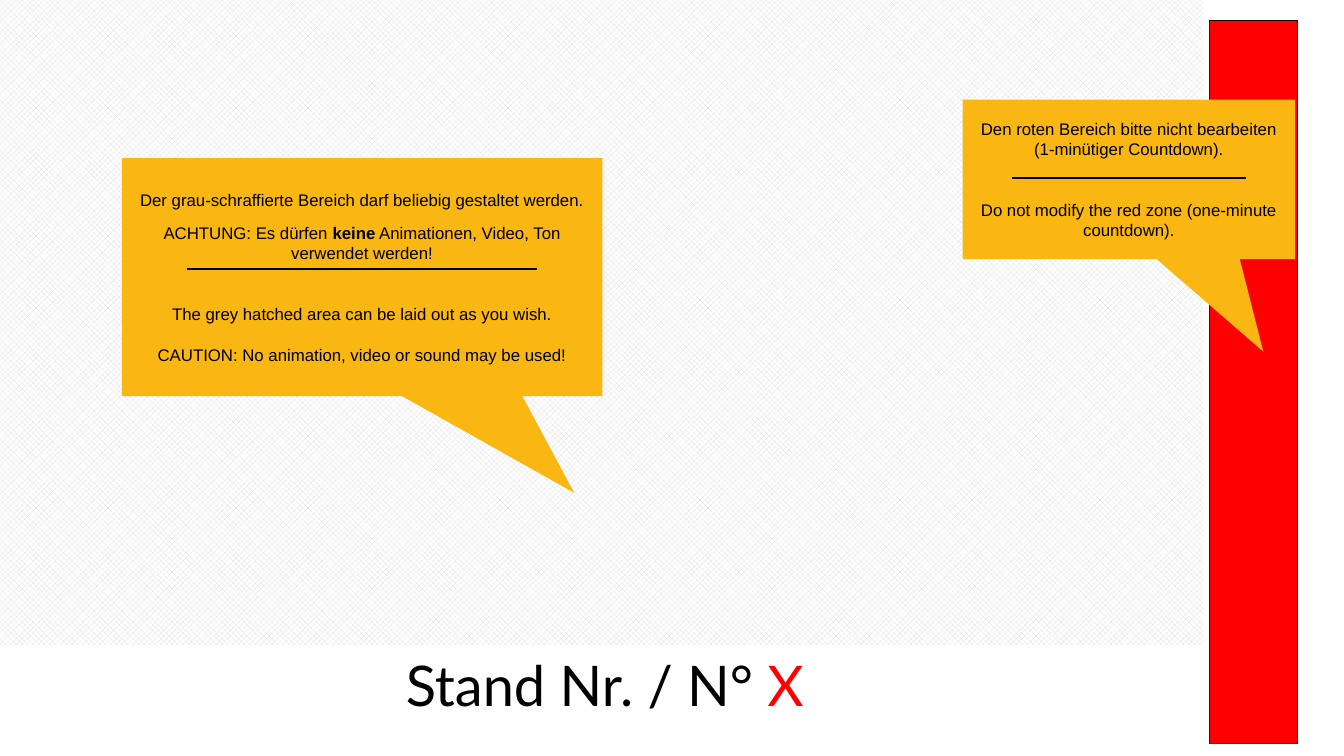
from lxml.etree import SubElement
from pptx import Presentation
from pptx.dml.color import RGBColor
from pptx.enum.dml import MSO_PATTERN
from pptx.enum.shapes import MSO_CONNECTOR, MSO_SHAPE
from pptx.enum.text import MSO_ANCHOR, MSO_AUTO_SIZE, PP_ALIGN
from pptx.oxml.ns import qn
from pptx.util import Pt

COLORS = {"text": "000000", "red": "FF0000", "note": "FAB611",
          "hatch": "D9D9D9", "paper": "FFFFFF"}
NOTE_FONT = {"name": "Arial", "size": Pt(12)}
TITLE_FONT = {"name": "Lato", "size": Pt(40)}
FRAME = {"vertical_anchor": MSO_ANCHOR.MIDDLE, "word_wrap": True,
         "auto_size": MSO_AUTO_SIZE.NONE}


def rgb(name):
    """Return the named colour."""
    return RGBColor.from_string(COLORS[name])


def set_attrs(obj, values):
    """Set each attribute in values on obj."""
    for key, value in values.items():
        setattr(obj, key, value)


def add_runs(p, runs, font):
    """Fill a centred paragraph with (text, colour, bold) runs."""
    p.alignment = PP_ALIGN.CENTER
    for i, (text, color, bold) in enumerate(runs):
        for j, line in enumerate(text.split("\n")):
            if j:
                p.add_line_break()
            r = p.add_run()
            r.text = line
            set_attrs(r.font, {**font, "bold": bold})
            r.font.color.rgb = rgb(color)


def add_box(shapes, kind, box, fill=None):
    """Add a plain shape without outline or shadow."""
    s = shapes.add_shape(kind, *map(Pt, box))
    s.shadow.inherit = False
    s.line.fill.background()
    if fill:
        s.fill.solid()
        s.fill.fore_color.rgb = rgb(fill)
    else:
        s.fill.background()
    return s


def add_countdown(slide, box):
    """Add the red countdown bar over its thin frame."""
    frame = add_box(slide.shapes, MSO_SHAPE.RECTANGLE, box)
    frame.line.color.rgb = rgb("text")
    frame.line.width = Pt(0.75)
    add_box(slide.shapes, MSO_SHAPE.RECTANGLE, box, "red")


def add_free_area(slide, box):
    """Add the grey hatched area."""
    s = add_box(slide.shapes, MSO_SHAPE.RECTANGLE, box)
    s.fill.patterned()
    s.fill.pattern = MSO_PATTERN.LARGE_CHECKER_BOARD
    s.fill.fore_color.rgb = rgb("hatch")
    s.fill.back_color.rgb = rgb("paper")


def add_note(slide, box, tip, rule, paragraphs):
    """Add a callout whose two languages are parted by a rule."""
    shapes = slide.shapes.add_group_shape().shapes
    s = add_box(shapes, MSO_SHAPE.RECTANGULAR_CALLOUT, box, "note")
    for i, value in enumerate(tip):
        s.adjustments[i] = value
    tf = s.text_frame
    set_attrs(tf, FRAME)
    for i, (space, runs) in enumerate(paragraphs):
        p = tf.add_paragraph() if i else tf.paragraphs[0]
        p.space_before = Pt(space)
        add_runs(p, runs, NOTE_FONT)
    left, top, width, _ = box
    inset, drop = rule
    y = Pt(top + drop)
    line = shapes.add_connector(MSO_CONNECTOR.STRAIGHT, Pt(left + inset), y,
                                Pt(left + width - inset), y)
    line.line.color.rgb = rgb("text")
    line.line.width = Pt(1.5)
    SubElement(line.element.spPr, qn("a:effectLst"))


def add_title(slide, box):
    """Place the stand number in the title placeholder."""
    title = slide.shapes.title
    set_attrs(title, dict(zip(("left", "top", "width", "height"), map(Pt, box))))
    set_attrs(title.text_frame, FRAME)
    add_runs(title.text_frame.paragraphs[0],
             [("Stand Nr. / N° ", "text", False), ("X", "red", False)], TITLE_FONT)


def main():
    """Build and save the slide."""
    prs = Presentation()
    prs.slide_width, prs.slide_height = Pt(960), Pt(540)
    slide = prs.slides.add_slide(prs.slide_layouts[5])
    add_countdown(slide, (864, 15, 62.6, 516.2))
    add_free_area(slide, (0, 0, 859, 460.8))
    add_note(slide, (87, 113, 343.4, 170), (0.441, 0.906), (46.5, 79.2), [
        (0, [("Der grau-schraffierte Bereich darf beliebig gestaltet werden.", "text", False)]),
        (9, [("ACHTUNG: Es dürfen ", "text", False), ("keine", "text", True),
             (" Animationen, Video, Ton verwendet werden!", "text", False)]),
        (29, [("The grey hatched area can be laid out as you wish.", "text", False)]),
        (15, [("CAUTION: No animation, video or sound may be used!", "text", False)]),
    ])
    add_note(slide, (687.6, 71.2, 237.6, 113.8), (0.404, 1.081), (35, 56.2), [
        (0, [("Den roten Bereich bitte nicht bearbeiten\n(1-minütiger Countdown).", "text", False)]),
        (29, [("Do not modify the red zone (one-minute countdown).", "text", False)]),
    ])
    add_title(slide, (0, 460.8, 864, 55.4))
    prs.save("out.pptx")


if __name__ == "__main__":
    main()
